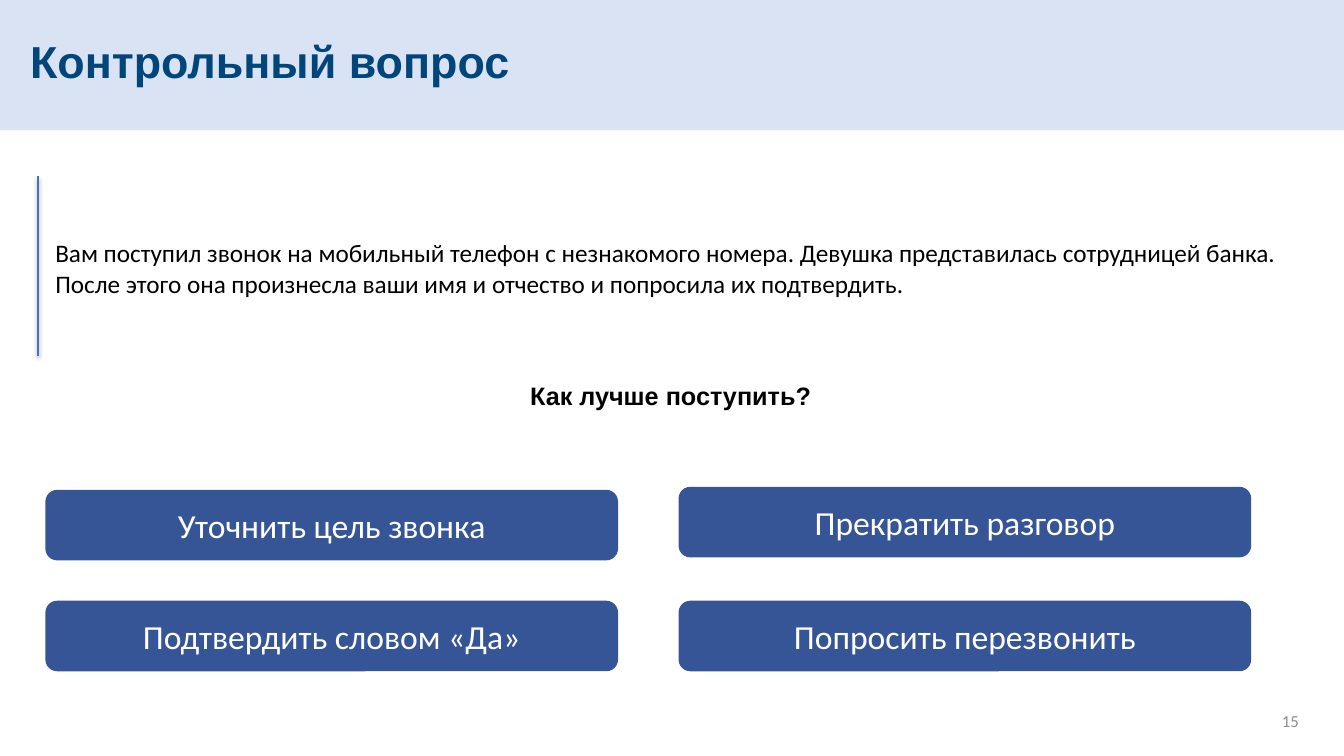
"""Build a quiz slide with a question and four answer buttons."""
from lxml.etree import SubElement
from pptx import Presentation
from pptx.dml.color import RGBColor
from pptx.enum.shapes import MSO_CONNECTOR, MSO_SHAPE
from pptx.enum.text import MSO_ANCHOR as Anchor, PP_ALIGN as Align
from pptx.oxml.ns import qn
from pptx.util import Inches, Pt

COLORS = {
    "banner": "DAE3F3",
    "title": "00467A",
    "body": "000000",
    "accent": "4472C4",
    "button": "365596",
    "button_text": "FFFFFF",
    "number": "8C8C8C",
    "shadow": "000000",
}
SLIDE_WIDTH, SLIDE_HEIGHT = 13.33, 7.5
BUTTON_WIDTH, BUTTON_HEIGHT = 5.68, 0.7
BUTTON_LEFT, COLUMN_STEP = 0.45, 6.28
LAST_ROW_TOP = 5.96
ANSWER_COLUMNS = [
    (4.86, ["Уточнить цель звонка", "Подтвердить словом «Да»"]),
    (4.83, ["Прекратить разговор", "Попросить перезвонить"]),
]
SITUATION = (
    "Вам поступил звонок на мобильный телефон с незнакомого номера. "
    "Девушка представилась сотрудницей банка. "
    "После этого она произнесла ваши имя и отчество и попросила их подтвердить."
)


def color(name):
    return RGBColor.from_string(COLORS[name])


def write(shape, text, size, color_name, font_name="Calibri", bold=False,
          align=Align.LEFT, anchor=Anchor.TOP):
    frame = shape.text_frame
    frame.word_wrap = True
    frame.vertical_anchor = anchor
    paragraph = frame.paragraphs[0]
    paragraph.text = text
    paragraph.alignment = align
    font = paragraph.font
    font.name, font.size, font.bold = font_name, Pt(size), bold
    font.color.rgb = color(color_name)


def add_text(slide, box, text, size, color_name, **style):
    textbox = slide.shapes.add_textbox(*map(Inches, box))
    write(textbox, text, size, color_name, **style)


def add_block(slide, kind, box, fill_name):
    shape = slide.shapes.add_shape(kind, *map(Inches, box))
    shape.shadow.inherit = False
    shape.fill.solid()
    shape.fill.fore_color.rgb = color(fill_name)
    shape.line.fill.background()
    return shape


def add_accent_line(slide, left, top, bottom):
    line = slide.shapes.add_connector(
        MSO_CONNECTOR.STRAIGHT, *map(Inches, (left, top, left, bottom)))
    line.line.color.rgb = color("accent")
    line.line.width = Pt(1.5)
    effects = SubElement(line._element.spPr, qn("a:effectLst"))
    shadow = SubElement(effects, qn("a:outerShdw"), blurRad=str(Pt(3.1)),
                        dist=str(Pt(1.8)), dir="5400000", rotWithShape="0")
    tint = SubElement(shadow, qn("a:srgbClr"), val=COLORS["shadow"])
    SubElement(tint, qn("a:alpha"), val="35000")


def add_answers(slide):
    for column, (first_top, answers) in enumerate(ANSWER_COLUMNS):
        left = BUTTON_LEFT + column * COLUMN_STEP
        for top, answer in zip((first_top, LAST_ROW_TOP), answers):
            button = add_block(slide, MSO_SHAPE.ROUNDED_RECTANGLE,
                               (left, top, BUTTON_WIDTH, BUTTON_HEIGHT), "button")
            write(button, answer, 24, "button_text",
                  align=Align.CENTER, anchor=Anchor.MIDDLE)


def main():
    presentation = Presentation()
    presentation.slide_width = Inches(SLIDE_WIDTH)
    presentation.slide_height = Inches(SLIDE_HEIGHT)
    slide = presentation.slides.add_slide(presentation.slide_layouts[6])

    add_block(slide, MSO_SHAPE.RECTANGLE, (0, 0, SLIDE_WIDTH, 1.29), "banner")
    add_text(slide, (9.98, 6.95, 3, 0.4), "15", 12, "number",
             align=Align.RIGHT, anchor=Anchor.MIDDLE)
    add_text(slide, (0.2, 0.29, 7.13, 0.64), "Контрольный вопрос", 32, "title",
             font_name="Arial", bold=True)
    add_text(slide, (0.45, 2.31, 12.63, 0.71), SITUATION, 18, "body")
    add_accent_line(slide, 0.38, 1.75, 3.53)
    add_answers(slide)
    add_text(slide, (5.16, 3.72, 3.15, 0.4), "Как лучше поступить?", 18, "body",
             font_name="Arial", bold=True)
    presentation.save("out.pptx")


if __name__ == "__main__":
    main()
